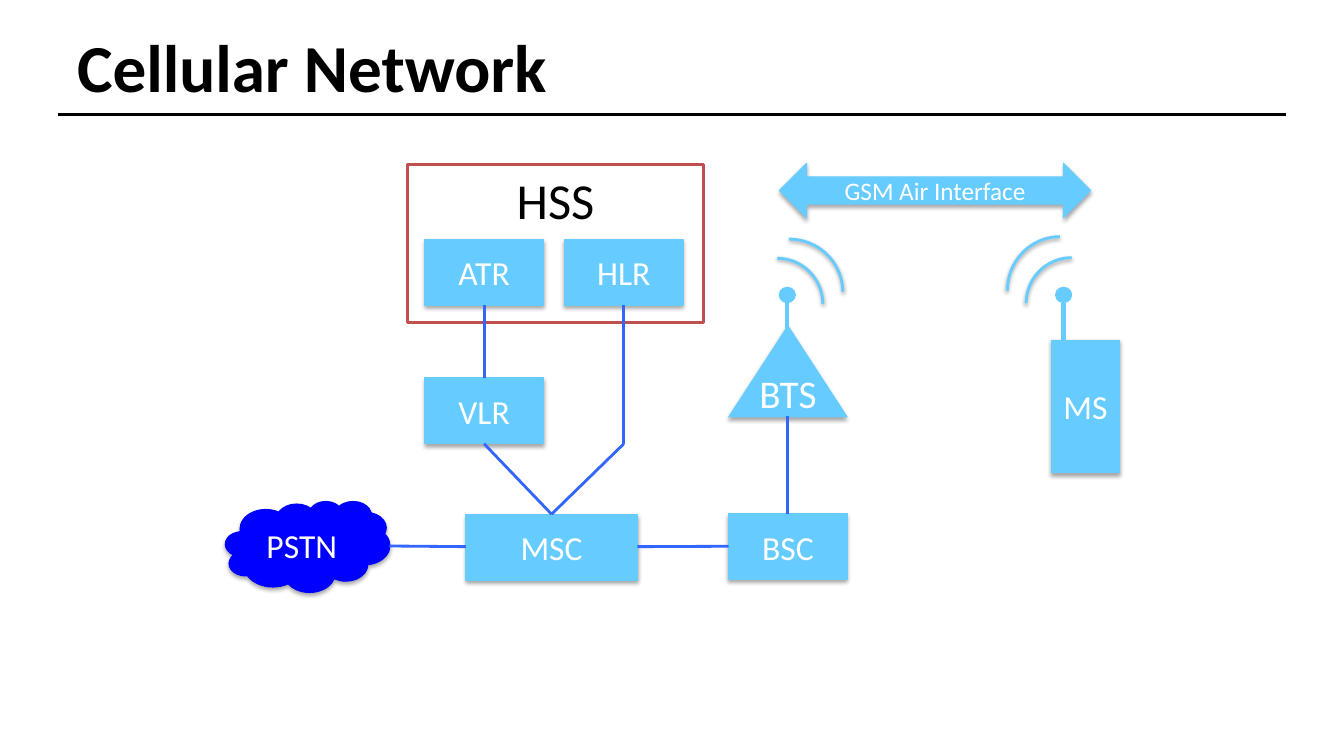
from lxml import etree
from pptx import Presentation
from pptx.dml.color import RGBColor
from pptx.enum.shapes import MSO_CONNECTOR, MSO_SHAPE
from pptx.enum.text import MSO_ANCHOR, PP_ALIGN
from pptx.oxml.ns import qn
from pptx.util import Pt

BLACK = RGBColor(0x00, 0x00, 0x00)
WHITE = RGBColor(0xFF, 0xFF, 0xFF)
SKY = RGBColor(0x66, 0xCC, 0xFF)
NAVY = RGBColor(0x00, 0x00, 0xFF)
BLUE = RGBColor(0x33, 0x66, 0xFF)
RED = RGBColor(0xC0, 0x50, 0x4D)

RECT, OVAL, ARC = MSO_SHAPE.RECTANGLE, MSO_SHAPE.OVAL, MSO_SHAPE.ARC
CLOUD, CONE = MSO_SHAPE.CLOUD, MSO_SHAPE.ISOSCELES_TRIANGLE
ARROW = MSO_SHAPE.LEFT_RIGHT_ARROW
STRAIGHT = MSO_CONNECTOR.STRAIGHT
TOP, MIDDLE = MSO_ANCHOR.TOP, MSO_ANCHOR.MIDDLE
LEFT, CENTER = PP_ALIGN.LEFT, PP_ALIGN.CENTER

deck = Presentation()
deck.slide_width, deck.slide_height = Pt(960), Pt(540)
slide = deck.slides.add_slide(deck.slide_layouts[6])
shapes = slide.shapes


def write(shape, text, size, color=WHITE, anchor=MIDDLE, align=CENTER):
    frame = shape.text_frame
    frame.word_wrap = True
    frame.vertical_anchor = anchor
    frame.text = text
    para = frame.paragraphs[0]
    para.alignment = align
    font = para.runs[0].font
    font.name, font.size = "Calibri", Pt(size)
    font.color.rgb = color
    return font


def draw(kind, box, fill=SKY, line=SKY, width=0.75, shadow=None):
    """Add a shape; shadow is its (opacity %, distance in points), if any."""
    shape = shapes.add_shape(kind, *map(Pt, box))
    shape.shadow.inherit = False
    if fill is None:
        shape.fill.background()
    else:
        shape.fill.solid()
        shape.fill.fore_color.rgb = fill
    shape.line.color.rgb = line
    shape.line.width = Pt(width)
    if shadow:
        alpha, drop = shadow
        effects = shape._element.spPr.find(qn("a:effectLst"))
        outer = etree.SubElement(
            effects, qn("a:outerShdw"), blurRad=str(Pt(3.1)),
            dist=str(Pt(drop)), dir="5400000", rotWithShape="0")
        tint = etree.SubElement(outer, qn("a:srgbClr"), val=str(BLACK))
        etree.SubElement(tint, qn("a:alpha"), val=str(alpha * 1000))
    return shape


title = shapes.add_textbox(Pt(48), Pt(13), Pt(864), Pt(68))
write(title, "Cellular Network", 48, BLACK, MIDDLE, LEFT).bold = True

# Network nodes
WIDE, TALL = 84.6, 47
nodes = [
    ("PSTN", CLOUD, (161, 358, 117.5, 65), NAVY, 24),
    ("MSC", RECT, (332.8, 367.5, 122.4, TALL), SKY, 24),
    ("BSC", RECT, (520.5, 367, WIDE, TALL), SKY, 24),
    ("VLR", RECT, (303.5, 270, WIDE, TALL), SKY, 24),
    ("ATR", RECT, (303.5, 171, WIDE, TALL), SKY, 24),
    ("HLR", RECT, (403.3, 171, WIDE, TALL), SKY, 24),
    ("MS", RECT, (750.8, 243, 49, 94.8), SKY, 24),
    ("GSM Air Interface", ARROW, (556.6, 116.6, 222.5, 39), SKY, 18),
]
for name, kind, box, color, size in nodes:
    write(draw(kind, box, color, color, shadow=(35, 1.8)), name, size)

group = draw(RECT, (291, 117.4, 211.7, 113), None, RED, 2)
write(group, "HSS", 36, BLACK, TOP)

# Base station
draw(CONE, (520.5, 232.8, WIDE, 65), shadow=(35, 1.8))
label = shapes.add_textbox(Pt(520.5), Pt(257), Pt(WIDE), Pt(TALL))
write(label, "BTS", 28)

# Antenna tips and radio waves
for left in (556.6, 754):
    draw(OVAL, (left, 205.2, 11.5, 11))
waves = [
    ((522.7, 184.5, 65, 65), 0),
    ((525, 170.8, 77, 75), 0),
    ((733, 184, 65, 65), 270),
    ((718.6, 170, 77, 75), 270),
]
for box, turn in waves:
    draw(ARC, box, None, SKY, 2, (38, 1.6)).rotation = turn

links = [
    ((41.8, 81.5), (918.7, 81.5), BLACK, 2),
    ((394, 367.3), (345.8, 317), BLUE, 2),
    ((345.8, 218), (345.8, 270), BLUE, 2),
    ((394, 367.3), (445.6, 317), BLUE, 2),
    ((445.6, 218), (445.6, 317), BLUE, 2),
    ((562.8, 297.5), (562.8, 367), BLUE, 2),
    ((455.2, 390.5), (520.5, 390.2), BLUE, 2),
    ((278.2, 390), (332.8, 390.5), BLUE, 2),
    ((562.4, 247.7), (562.4, 216), SKY, 3),
    ((759.6, 247.7), (759.6, 216.5), SKY, 3),
]
for start, end, color, width in links:
    link = shapes.add_connector(STRAIGHT, *map(Pt, start + end))
    link.line.color.rgb = color
    link.line.width = Pt(width)
    etree.SubElement(link._element.spPr, qn("a:effectLst"))

deck.save("out.pptx")
